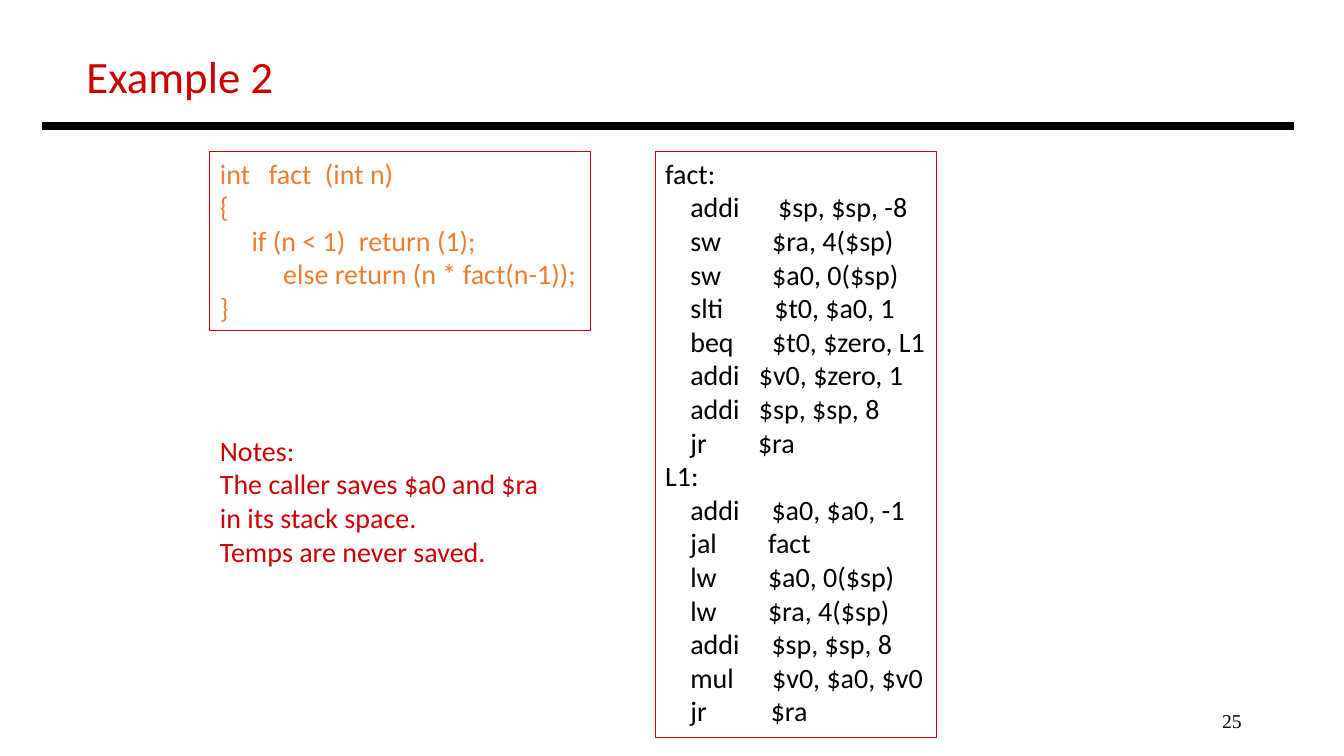
"""Build the slide "Example 2": a recursive factorial in C and in MIPS assembly."""
from lxml import etree
from pptx import Presentation
from pptx.dml.color import RGBColor
from pptx.enum.shapes import MSO_CONNECTOR, MSO_SHAPE
from pptx.enum.text import MSO_ANCHOR, PP_ALIGN
from pptx.oxml.ns import qn
from pptx.util import Pt

COLORS = {"red": "CC0000", "orange": "ED7D31", "black": "000000"}
MNEMONIC_TAB = 18

c_lines = [
    ("int\tfact\t(int n)", [35, 75]),
    ("{", []),
    ("\tif (n < 1)\treturn (1);", [22.6, 99.3]),
    ("\telse return (n * fact(n-1));", [45.2]),
    ("}", []),
]
instructions = [
    ("fact:", "", 0),
    ("addi", "$sp, $sp, -8", 80.7),
    ("sw", "$ra, 4($sp)", 76.5),
    ("sw", "$a0, 0($sp)", 76.5),
    ("slti", "$t0, $a0, 1", 78),
    ("beq", "$t0, $zero, L1", 76.5),
    ("addi", "$v0, $zero, 1", 67),
    ("addi", "$sp, $sp, 8", 67),
    ("jr", "$ra", 66.4),
    ("L1:", "", 0),
    ("addi", "$a0, $a0, -1", 76),
    ("jal", "fact", 73.5),
    ("lw", "$a0, 0($sp)", 73.5),
    ("lw", "$ra, 4($sp)", 73.5),
    ("addi", "$sp, $sp, 8", 76),
    ("mul", "$v0, $a0, $v0", 76.5),
    ("jr", "$ra", 75.5),
]
assembly_lines = [
    (f"\t{name}\t{operands}", [MNEMONIC_TAB, column]) if operands else (name, [])
    for name, operands, column in instructions
]
notes = ["Notes:", "The caller saves $a0 and $ra", "in its stack space.", "Temps are never saved."]
note_lines = [(note, []) for note in notes]


def color(name):
    return RGBColor.from_string(COLORS[name])


def write_lines(shape, lines, size, color_name, font="Calibri", align=PP_ALIGN.LEFT, anchor=MSO_ANCHOR.TOP):
    frame = shape.text_frame
    frame.word_wrap = True
    frame.vertical_anchor = anchor
    for index, (text, tabs) in enumerate(lines):
        paragraph = frame.paragraphs[0] if index == 0 else frame.add_paragraph()
        paragraph.alignment = align
        if tabs:
            tab_list = etree.SubElement(paragraph._p.get_or_add_pPr(), qn("a:tabLst"))
            for position in tabs:
                etree.SubElement(tab_list, qn("a:tab"), pos=str(Pt(position)), algn="l")
        run = paragraph.add_run()
        run.text = text
        run.font.size = Pt(size)
        run.font.name = font
        run.font.color.rgb = color(color_name)


presentation = Presentation()
presentation.slide_width = Pt(960)
presentation.slide_height = Pt(540)
slide = presentation.slides.add_slide(presentation.slide_layouts[6])

page_number = slide.shapes.add_textbox(Pt(678), Pt(500.4), Pt(216), Pt(28.8))
write_lines(page_number, [("25", [])], 14, "black", "Times New Roman", PP_ALIGN.RIGHT, MSO_ANCHOR.MIDDLE)

title = slide.shapes.add_textbox(Pt(54.7), Pt(31), Pt(149), Pt(46))
write_lines(title, [("Example 2", [])], 32, "red")

for left, width, height, lines, color_name in [
    (150, 271.5, 128, c_lines, "orange"),
    (468, 201, 419, assembly_lines, "black"),
]:
    code_box = slide.shapes.add_shape(MSO_SHAPE.RECTANGLE, Pt(left), Pt(108), Pt(width), Pt(height))
    code_box.shadow.inherit = False
    code_box.fill.background()
    code_box.line.color.rgb = color("red")
    code_box.line.width = Pt(0.75)
    code_box.text_frame.margin_right = Pt(0)
    write_lines(code_box, lines, 20, color_name)

notes_box = slide.shapes.add_textbox(Pt(150), Pt(306), Pt(244), Pt(104.5))
write_lines(notes_box, note_lines, 20, "red")

title_rule = slide.shapes.add_connector(MSO_CONNECTOR.STRAIGHT, Pt(30), Pt(90), Pt(924.5), Pt(90))
title_rule.line.color.rgb = color("black")
title_rule.line.width = Pt(6)
etree.SubElement(title_rule._element.spPr, qn("a:effectLst"))

presentation.save("out.pptx")
